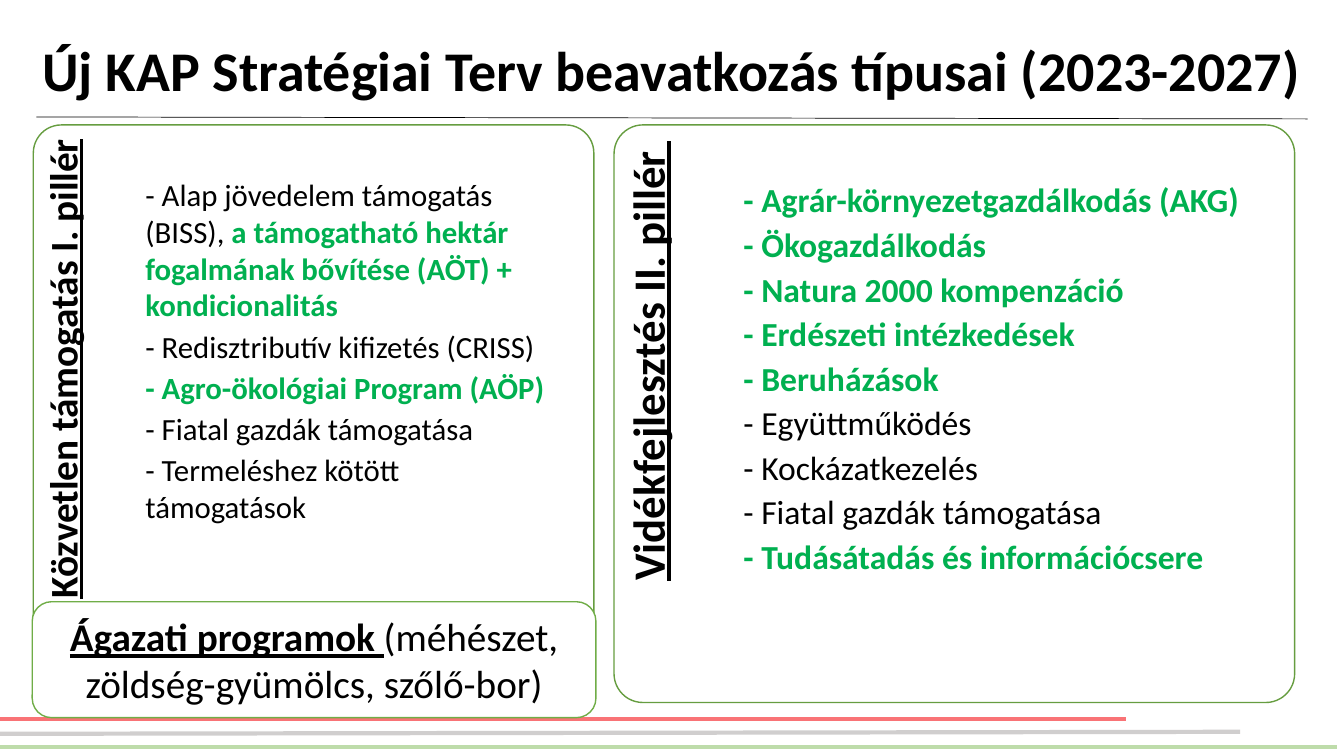
from lxml.etree import SubElement
from pptx import Presentation
from pptx.dml.color import RGBColor
from pptx.enum.shapes import MSO_CONNECTOR, MSO_SHAPE
from pptx.enum.text import MSO_ANCHOR, PP_ALIGN
from pptx.oxml.ns import qn
from pptx.util import Inches, Pt

WIDTH, HEIGHT = Inches(13.33), Inches(7.5)
FONT = "Calibri"
COLOURS = {
    "text": "000000", "accent": "00B050", "panel": "FFFFFF",
    "panel_edge": "669D40", "box_edge": "70AD47",
    "red": "F97376", "green": "BEDCAA", "grey": "D0CECE",
}
# Each list paragraph is a sequence of (text, is highlighted) pairs.
DIRECT_SUPPORT = [
    [("- Alap jövedelem támogatás (BISS), ", False),
     ("a támogatható hektár fogalmának bővítése (AÖT) + kondicionalitás", True)],
    [("- Redisztributív kifizetés (CRISS)", False)],
    [("- Agro-ökológiai Program (AÖP)", True)],
    [("- Fiatal gazdák támogatása", False)],
    [("- Termeléshez kötött támogatások", False)],
]
RURAL_DEVELOPMENT = [
    [("- Agrár-környezetgazdálkodás (AKG)", True)],
    [("- Ökogazdálkodás", True)],
    [("- Natura 2000 kompenzáció", True)],
    [("- Erdészeti intézkedések", True)],
    [("- Beruházások", True)],
    [("- Együttműködés", False)],
    [("- Kockázatkezelés", False)],
    [("- Fiatal gazdák támogatása", False)],
    [("- Tudásátadás és információcsere", True)],
]


def columns(count):
    """Length of count columns, a hundred to the slide's width."""
    return round(WIDTH * count / 100)


def rows(count):
    """Length of count rows, a hundred to the slide's height."""
    return round(HEIGHT * count / 100)


def colour(name):
    return RGBColor.from_string(COLOURS[name])


def set_font(font, size, bold=False, underline=False):
    font.name, font.size = FONT, Pt(size)
    font.bold, font.underline = bold, underline
    font.color.rgb = colour("text")


def set_insets(frame, left, top, right, bottom):
    frame.margin_left, frame.margin_top = Inches(left), Inches(top)
    frame.margin_right, frame.margin_bottom = Inches(right), Inches(bottom)


def add_line(page, start, end, name, weight):
    line = page.shapes.add_connector(
        MSO_CONNECTOR.STRAIGHT, columns(start[0]), rows(start[1]),
        columns(end[0]), rows(end[1]))
    line.line.color.rgb = colour(name)
    line.line.width = Pt(weight)
    SubElement(line._element.spPr, qn("a:effectLst"))


def add_rounded_box(page, left, top, width, height, edge, rounding=None):
    box = page.shapes.add_shape(
        MSO_SHAPE.ROUNDED_RECTANGLE, left, top, width, height)
    box.shadow.inherit = False
    box.fill.solid()
    box.fill.fore_color.rgb = colour("panel")
    box.line.color.rgb = colour(edge)
    box.line.width = Pt(1)
    if rounding is not None:
        box.adjustments[0] = rounding
    return box


def add_heading(page, panel, text, size):
    """Heading that reads upwards along the panel's left edge."""
    depth, length = round(panel.width * 0.2), round(panel.height * 0.82)
    box = page.shapes.add_textbox(
        panel.left + (depth - length) // 2, panel.top + (length - depth) // 2,
        length, depth)
    box.rotation = 270
    frame = box.text_frame
    frame.word_wrap = True
    set_insets(frame, 0, size / 270, size / 200, 0)
    para = frame.paragraphs[0]
    para.text = text
    para.alignment, para.line_spacing = PP_ALIGN.RIGHT, 0.9
    set_font(para.font, size, bold=True, underline=True)


def add_list(page, panel, indent, items, size, top_inset):
    box = page.shapes.add_textbox(
        panel.left + round(panel.width * indent), panel.top,
        round(panel.width * 0.75), panel.height)
    frame = box.text_frame
    frame.word_wrap = True
    set_insets(frame, 0, top_inset, 0, 0)
    for index, item in enumerate(items):
        para = frame.add_paragraph() if index else frame.paragraphs[0]
        para.space_after = Pt(3)
        set_font(para.font, size)
        for text, highlighted in item:
            span = para.add_run()
            span.text = text
            if highlighted:
                span.font.bold = True
                span.font.color.rgb = colour("accent")


def add_title(page, text):
    title = page.shapes.title
    title.left, title.top = columns(2.4), 0
    title.width, title.height = columns(95.72), rows(19.47)
    title.text_frame.vertical_anchor = MSO_ANCHOR.MIDDLE
    para = title.text_frame.paragraphs[0]
    para.text = text
    para.alignment, para.line_spacing = PP_ALIGN.LEFT, 0.9
    set_font(para.font, 40, bold=True)


def add_pillar(page, left, width, heading, heading_size, indent, items, size, top_inset):
    panel = add_rounded_box(page, columns(left), rows(16.53), columns(width),
                            rows(76.4), "panel_edge", 0.05)
    add_heading(page, panel, heading, heading_size)
    add_list(page, panel, indent, items, size, top_inset)


def add_sector_box(page, lead, details):
    box = add_rounded_box(page, columns(2.4), rows(79.6), columns(41.94),
                          rows(15.33), "box_edge")
    frame = box.text_frame
    frame.word_wrap = True
    frame.vertical_anchor = MSO_ANCHOR.MIDDLE
    para = frame.paragraphs[0]
    para.alignment = PP_ALIGN.CENTER
    set_font(para.font, 28)
    span = para.add_run()
    span.text = lead
    span.font.bold = span.font.underline = True
    para.add_run().text = details


def main():
    deck = Presentation()
    deck.slide_width, deck.slide_height = WIDTH, HEIGHT
    page = deck.slides.add_slide(deck.slide_layouts[5])
    add_line(page, (0, 95.07), (83.8, 95.07), "red", 3)
    add_line(page, (0, 98.8), (99.47, 98.8), "green", 3)
    add_line(page, (0, 97.07), (92.27, 96.8), "grey", 3)
    add_line(page, (2.7, 15.47), (97.3, 15.73), "text", 0.5)
    add_title(page, "Új KAP Stratégiai Terv beavatkozás típusai (2023-2027)")
    add_pillar(page, 2.48, 41.71, "Közvetlen támogatás I. pillér", 28,
               0.2, DIRECT_SUPPORT, 22, 0.5)
    add_pillar(page, 45.69, 50.64, "Vidékfejlesztés II. pillér ", 32,
               0.19, RURAL_DEVELOPMENT, 24, 0.54)
    add_sector_box(page, "Ágazati programok ",
                   "(méhészet, zöldség-gyümölcs, szőlő-bor)")
    deck.save("out.pptx")


if __name__ == "__main__":
    main()
